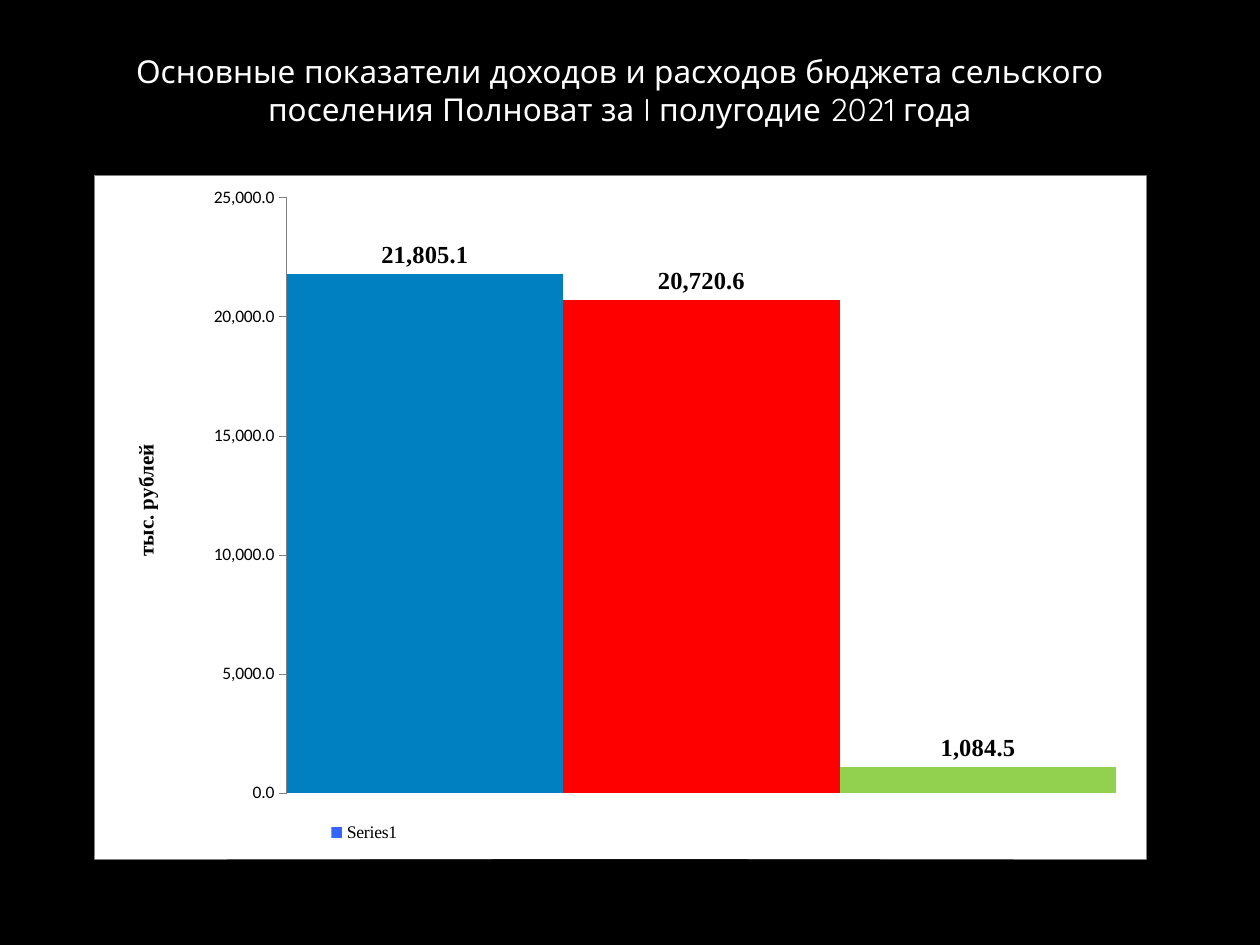
from lxml import etree
from pptx import Presentation
from pptx import util as u
from pptx.chart.data import CategoryChartData
from pptx.dml.color import RGBColor
from pptx.enum import chart as c, text
from pptx.oxml import parse_xml
from pptx.oxml.ns import nsdecls, qn

PX = u.Inches(1) / 126
THEME = {
    "black": "000000", "white": "FFFFFF", "grey": "808080", "series": "3366FF",
    "bars": ["0080C0", "FF0000", "92D050"],
    "title": {"name": "Quicksand", "size": u.Pt(18)},
    "chart": {"name": "Arial", "size": u.Pt(10)},
    "ticks": {"name": "Calibri", "size": u.Pt(10)},
    "axis": {"name": "Times New Roman", "size": u.Pt(12), "bold": True},
    "legend": {"name": "Times New Roman", "size": u.Pt(10.1)},
    "labels": {"name": "Times New Roman", "size": u.Pt(14), "bold": True},
}


def style(font, role, color="black"):
    for key, value in THEME[role].items():
        setattr(font, key, value)
    font.color.rgb = RGBColor.from_string(THEME[color])


def place(parent, index, **values):
    for old in parent.findall(qn("c:layout")):
        parent.remove(old)
    layout = etree.Element(qn("c:layout"))
    manual = etree.SubElement(layout, qn("c:manualLayout"))
    for key, value in values.items():
        etree.SubElement(manual, qn(f"c:{key}"), val=str(value))
    parent.insert(index, layout)


deck = Presentation()
deck.slide_width, deck.slide_height = (round(n * PX) for n in (1260, 945))
page = deck.slides.add_slide(deck.slide_layouts[6])
page.background.fill.solid()
page.background.fill.fore_color.rgb = RGBColor.from_string(THEME["black"])

box = page.shapes.add_textbox(*(round(n * PX) for n in (94, 46, 1052, 89)))
frame = box.text_frame
frame.word_wrap = True
para = frame.paragraphs[0]
para.alignment = text.PP_ALIGN.CENTER
span = para.add_run()
span.text = ("Основные показатели доходов и расходов бюджета сельского "
             "поселения Полноват за I полугодие 2021 года")
style(span.font, "title", "white")

data = CategoryChartData(number_format="#,##0.0")
data.categories = ["1", "2", "3"]
data.add_series("", [21805.1, 20720.6, 1084.5])
chart = page.shapes.add_chart(
    c.XL_CHART_TYPE.COLUMN_CLUSTERED,
    *(round(n * PX) for n in (94, 175, 1052, 684)), data).chart
style(chart.font, "chart")
chart.has_title = False
root = chart._chartSpace
root.find(qn("c:chart")).addnext(parse_xml(
    f'<c:spPr {nsdecls("c", "a")}>'
    f'<a:solidFill><a:srgbClr val="{THEME["white"]}"/></a:solidFill>'
    f'<a:ln w="3175"><a:solidFill><a:srgbClr val="{THEME["grey"]}"/></a:solidFill></a:ln>'
    '</c:spPr>'))
place(root.find(".//" + qn("c:plotArea")), 0, layoutTarget="inner", xMode="edge",
      yMode="edge", x=0.183, y=0.033, w=0.789, h=0.871)

chart.category_axis.visible = False
axis = chart.value_axis
for key, value in {"minimum_scale": 0, "maximum_scale": 25000, "major_unit": 5000,
                   "has_major_gridlines": False,
                   "major_tick_mark": c.XL_TICK_MARK.OUTSIDE}.items():
    setattr(axis, key, value)
axis.tick_labels.number_format = "#,##0.0"
axis.tick_labels.number_format_is_linked = False
style(axis.tick_labels.font, "ticks")
axis.format.line.color.rgb = RGBColor.from_string(THEME["grey"])
axis.format.line.width = u.Pt(0.25)
title = axis.axis_title
title.text_frame.text = "тыс. рублей"
style(title.text_frame.paragraphs[0].runs[0].font, "axis")
title.text_frame._txBody.bodyPr.set("rot", "-5400000")
title.text_frame._txBody.bodyPr.set("vert", "horz")
place(title._element, 1, xMode="edge", yMode="edge", x=0.033, y=0.388)

plot = chart.plots[0]
plot.gap_width = 0
plot.vary_by_categories = False
series = plot.series[0]
series._element.remove(series._element.find(qn("c:tx")))
series.format.fill.solid()
series.format.fill.fore_color.rgb = RGBColor.from_string(THEME["series"])
for index, color in enumerate(THEME["bars"]):
    fill = series.points[index].format.fill
    fill.solid()
    fill.fore_color.rgb = RGBColor.from_string(color)
labels = series.data_labels
for key, value in {"show_value": True, "number_format": "#,##0.0",
                   "number_format_is_linked": False,
                   "position": c.XL_LABEL_POSITION.OUTSIDE_END}.items():
    setattr(labels, key, value)
style(labels.font, "labels")

chart.has_legend = True
chart.legend.position = c.XL_LEGEND_POSITION.RIGHT
chart.legend.include_in_layout = False
style(chart.legend.font, "legend")
place(chart.legend._element, 1, xMode="edge", yMode="edge", x=0.22, y=0.94)

deck.save("out.pptx")
